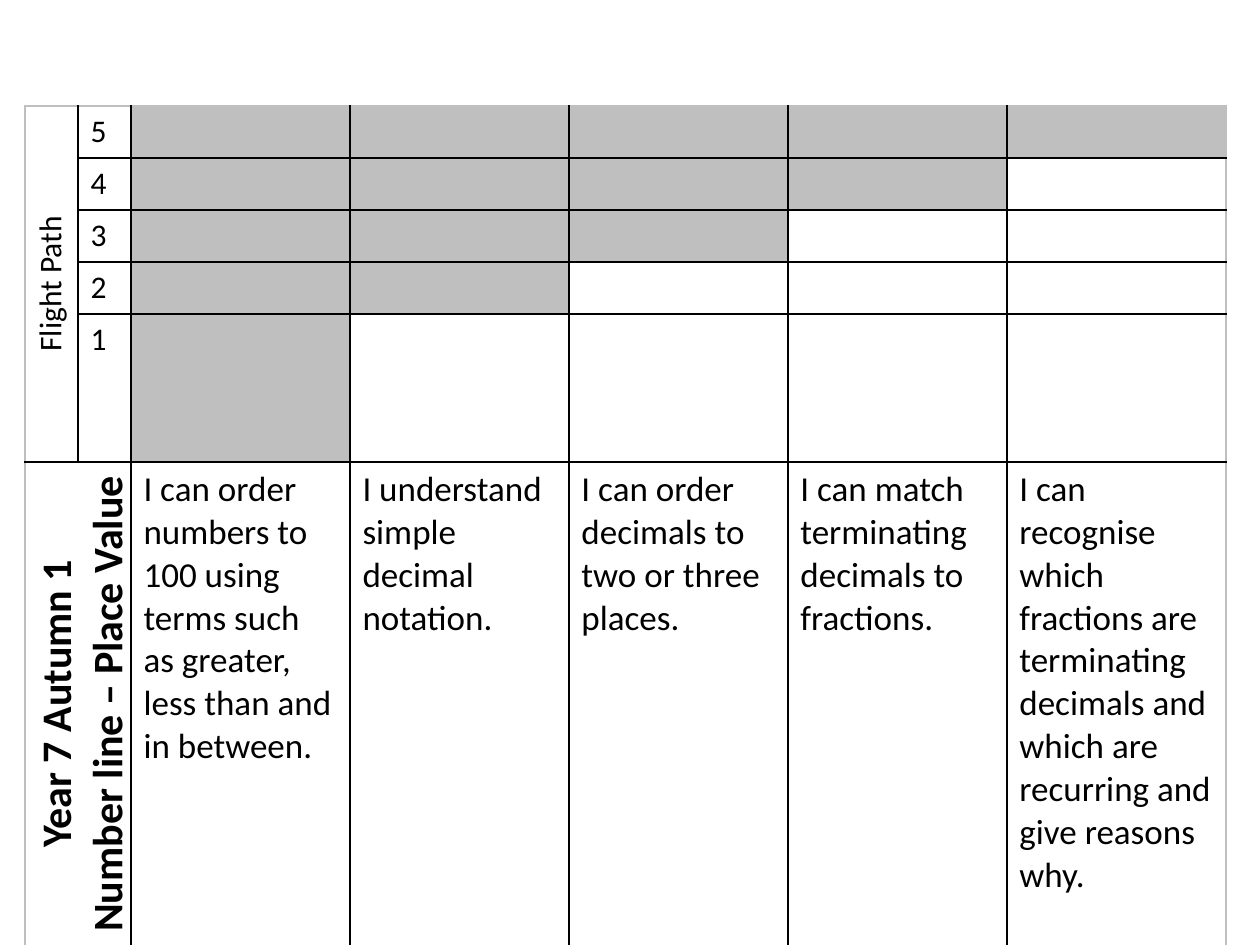
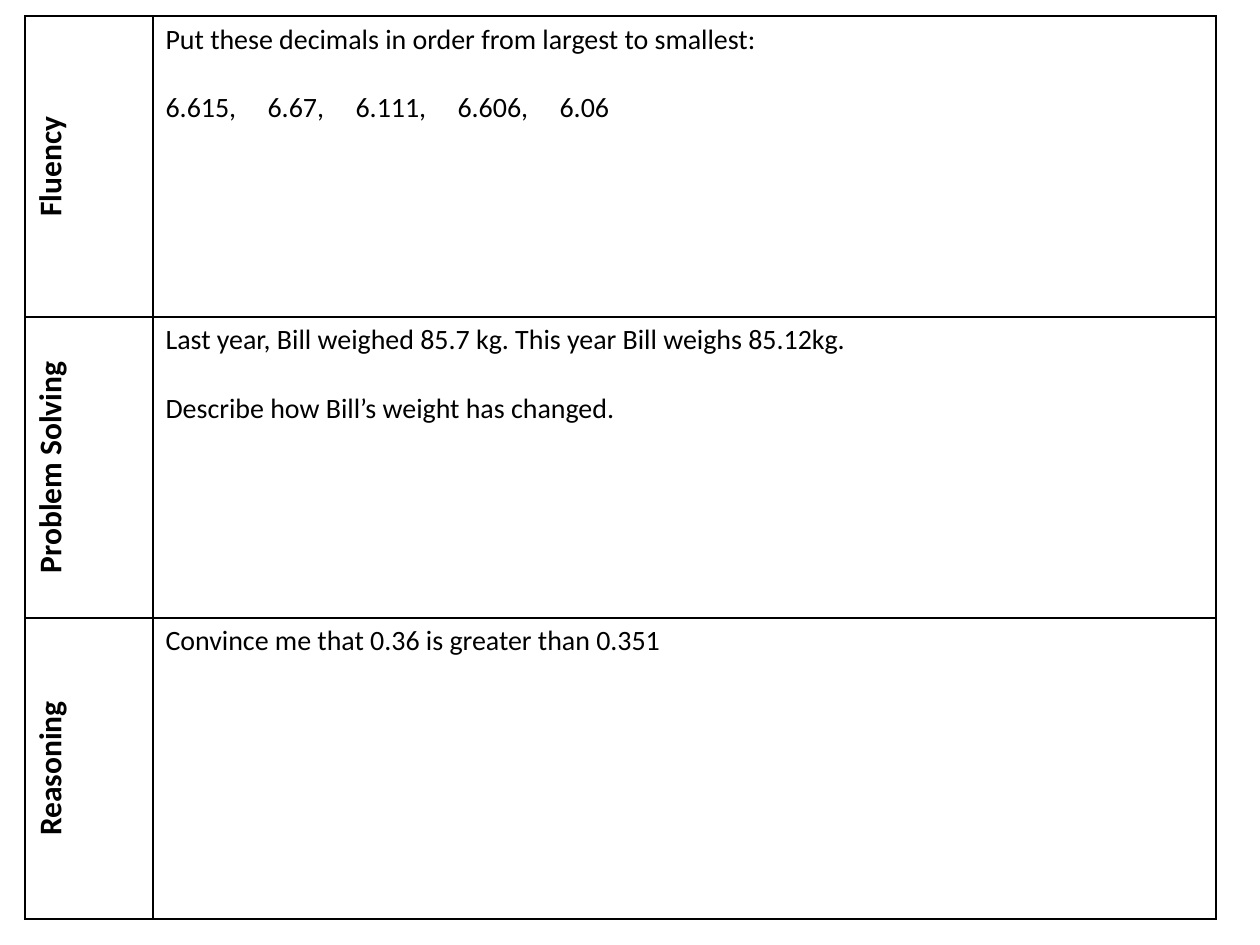
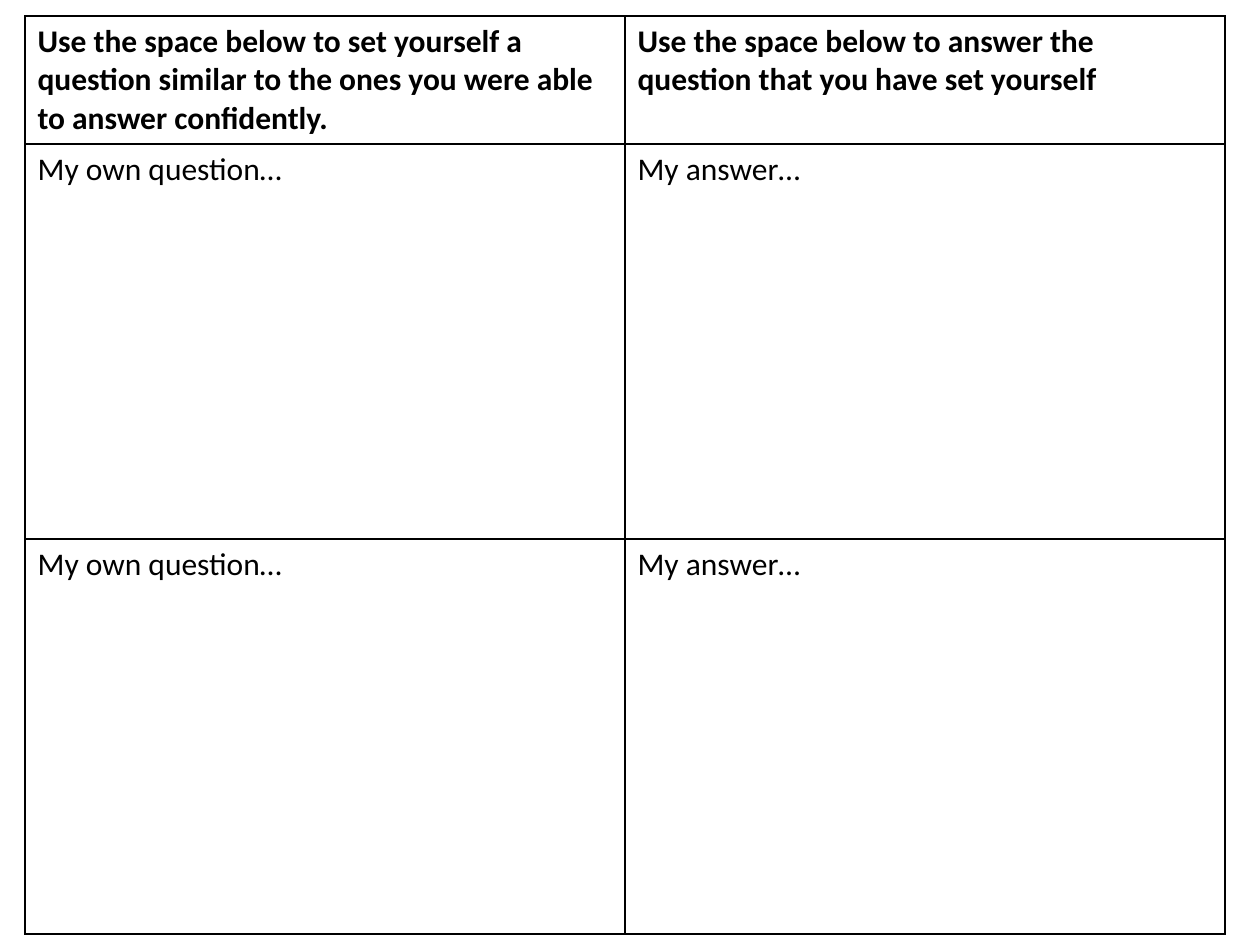
from dataclasses import dataclass

from lxml import etree
from pptx import Presentation
from pptx import util as u
from pptx.dml.color import RGBColor
from pptx.enum import text as t
from pptx.oxml import ns

PX = 914400 / 126


@dataclass(frozen=True)
class Theme:
    font: str = "Calibri"
    ink: str = "000000"
    shade: str = "BFBFBF"
    border: float = 1
    heading: int = 24
    goal: int = 20
    label: int = 18
    task: int = 16
    blank_line: float = 19.5


THEME = Theme()


def px(value):
    return u.Emu(round(value * PX))


# Cell formatting
def set_borders(cell, colours):
    """Draw the left, right, top and bottom border in the given colours."""
    props = cell._tc.get_or_add_tcPr()
    for side, colour in zip("LRTB", colours):
        line = etree.SubElement(props, ns.qn(f"a:ln{side}"),
                                w=str(u.Pt(THEME.border)))
        fill = etree.SubElement(line, ns.qn("a:solidFill"))
        etree.SubElement(fill, ns.qn("a:srgbClr"), val=colour)


def shade_cell(cell):
    cell.fill.solid()
    cell.fill.fore_color.rgb = RGBColor.from_string(THEME.shade)


def set_tabs(para, stops):
    tabs = etree.SubElement(para._p.get_or_add_pPr(), ns.qn("a:tabLst"))
    for stop in stops:
        etree.SubElement(tabs, ns.qn("a:tab"), pos=str(px(stop)), algn="l")


def write(cell, *lines, size=THEME.label, bold=False, centre=False,
          middle=False, upward=False, gap=0, tabs=()):
    """Fill a cell with one paragraph for each line."""
    frame = cell.text_frame
    for index, line in enumerate(lines):
        para = frame.add_paragraph() if index else frame.paragraphs[0]
        if centre:
            para.alignment = t.PP_ALIGN.CENTER
        if index and gap:
            para.space_before = u.Pt(gap)
        if "\t" in line:
            set_tabs(para, tabs)
        span = para.add_run()
        span.text = line
        span.font.name = THEME.font
        span.font.size = u.Pt(size)
        span.font.bold = bold
        span.font.color.rgb = RGBColor.from_string(THEME.ink)
    if middle:
        cell.vertical_anchor = t.MSO_ANCHOR.MIDDLE
    if upward:
        cell._tc.get_or_add_tcPr().set("vert", "vert270")


# Tables
def add_grid(deck, left, top, columns, rows, edge=THEME.ink):
    """Add a page holding one plain bordered table."""
    page = deck.slides.add_slide(deck.slide_layouts[6])
    frame = page.shapes.add_table(len(rows), len(columns), px(left), px(top),
                                  px(sum(columns)), px(sum(rows)))
    grid = frame.table
    grid.first_row = grid.horz_banding = False
    for column, width in zip(grid.columns, columns):
        column.width = px(width)
    for row, size in zip(grid.rows, rows):
        row.height = px(size)
    last_row, last_column = len(rows) - 1, len(columns) - 1
    for r in range(len(rows)):
        for c in range(len(columns)):
            cell = grid.cell(r, c)
            outer = (c == 0, c == last_column, r == 0, r == last_row)
            set_borders(cell, [edge if out else THEME.ink for out in outer])
            cell.fill.background()
    return grid


# Pages
def add_flight_path(deck):
    goals = [
        "I can order numbers to 100 using terms such as greater, less than "
        "and in between.",
        "I understand simple decimal notation.",
        "I can order decimals to two or three places.",
        "I can match terminating decimals to fractions.",
        "I can recognise which fractions are terminating decimals and which "
        "are recurring and give reasons why.",
    ]
    levels = len(goals)
    # The goal row is tall enough for the upward heading on two lines
    grid = add_grid(deck, 25, 106, [53, 53] + [219] * levels,
                    [52] * (levels - 1) + [147, 484], edge=THEME.shade)
    grid.cell(0, 0).merge(grid.cell(levels - 1, 0))
    grid.cell(levels, 0).merge(grid.cell(levels, 1))
    write(grid.cell(0, 0), "Flight Path", centre=True, middle=True, upward=True)
    write(grid.cell(levels, 0), "Year 7 Autumn 1", "Number line – Place Value",
          size=THEME.heading, bold=True, centre=True, middle=True, upward=True)
    for row in range(levels):
        level = levels - row
        write(grid.cell(row, 1), str(level))
        for step in range(level):
            shade_cell(grid.cell(row, 2 + step))
    for column, goal in enumerate(goals, start=2):
        write(grid.cell(levels, column), goal, size=THEME.goal)


def add_tasks(deck):
    tasks = [
        ("Fluency", ["Put these decimals in order from largest to smallest:",
                     "6.615,\t6.67,\t6.111,\t6.606,\t6.06"]),
        ("Problem Solving",
         ["Last year, Bill weighed 85.7 kg. This year Bill weighs 85.12kg.",
          "Describe how Bill’s weight has changed."]),
        ("Reasoning", ["Convince me that 0.36 is greater than 0.351"]),
    ]
    grid = add_grid(deck, 25, 16, [128, 1063], [301] * len(tasks))
    for row, (skill, lines) in enumerate(tasks):
        write(grid.cell(row, 0), skill, bold=True, centre=True, upward=True)
        write(grid.cell(row, 1), *lines, size=THEME.task,
              gap=THEME.blank_line, tabs=(102, 190, 292, 394))


def add_own_questions(deck):
    prompts = [
        ("Use the space below to set yourself a question similar to the ones "
         "you were able to answer confidently.", "My own question…"),
        ("Use the space below to answer the question that you have set "
         "yourself", "My answer…"),
    ]
    grid = add_grid(deck, 25, 16, [600, 600], [123, 395, 395])
    for column, (heading, prompt) in enumerate(prompts):
        write(grid.cell(0, column), heading, bold=True)
        for row in (1, 2):
            write(grid.cell(row, column), prompt)


def main():
    deck = Presentation()
    deck.slide_width, deck.slide_height = px(1260), px(945)
    add_flight_path(deck)
    add_tasks(deck)
    add_own_questions(deck)
    deck.save("out.pptx")


if __name__ == "__main__":
    main()
